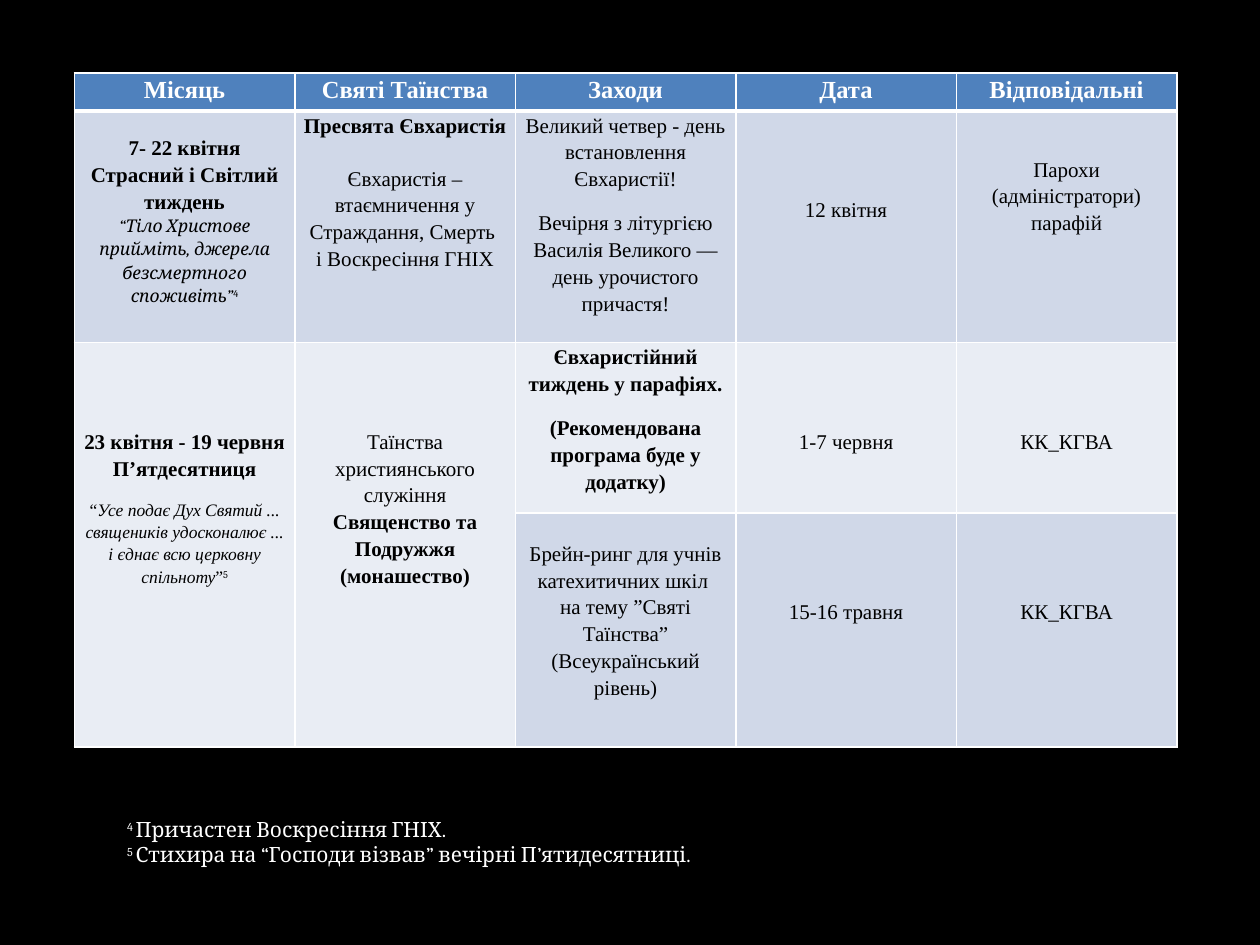
from lxml import etree
from pptx import Presentation
from pptx.dml.color import RGBColor
from pptx.enum.text import PP_ALIGN
from pptx.oxml.ns import qn
from pptx.util import Inches, Pt

CENTER = PP_ALIGN.CENTER
COLORS = {"background": "000000", "header": "4F81BD", "band": "D0D8E8",
          "light": "E9EDF4", "white": "FFFFFF", "text": "000000"}
SERIF, CAMBRIA = "Times New Roman", "Cambria"

# Run styles: font, size, bold, italic, superscript
STYLES = {
    "header": (SERIF, 14, True, False, False),
    "plain": (SERIF, 12, False, False, False),
    "bold": (SERIF, 12, True, False, False),
    "small": (SERIF, 10, False, False, False),
    "small italic": (SERIF, 10, False, True, False),
    "quote": (CAMBRIA, 10, False, True, False),
    "quote mark": (CAMBRIA, 10, False, False, True),
    "note": (CAMBRIA, 12, False, False, False),
    "note mark": (CAMBRIA, 12, False, False, True),
}

COL_WIDTH = 1.75
ROW_HEIGHTS = [0.3, 1.84, 1.35, 1.86]
HEADERS = ["Місяць", "Святі Таїнства", "Заходи", "Дата", "Відповідальні"]
MIDDLE = 0.67  # top inset of cells whose text starts halfway down


def para(text, style="plain", after=10):
    return [(text, style)], after


# (row, column): fill, top inset, paragraphs
CELLS = {
    (1, 0): ("band", 0.18, [
        para("7- 22 квітня", "bold", 0),
        para("Страсний і Світлий тиждень", "bold", 0),
        ([("“Тіло Христове прийміть, джерела безсмертного споживіть”", "quote"),
          ("4", "quote mark")], 0)]),
    (1, 1): ("band", 0, [
        para("Пресвята Євхаристія", "bold", 15),
        para("Євхаристія – втаємничення у Страждання, Смерть \nі Воскресіння ГНІХ",
             after=0)]),
    (1, 2): ("band", 0, [
        para("Великий четвер - день встановлення Євхаристії!"),
        para("Вечірня з літургією Василія Великого — день урочистого причастя!")]),
    (1, 3): ("band", MIDDLE, [para("12 квітня")]),
    (1, 4): ("band", 0.35, [para("Парохи (адміністратори) парафій")]),
    (2, 0): ("light", MIDDLE, [
        para("23 квітня - 19 червня\nП’ятдесятниця", "bold"),
        ([("“", "small"),
          ("Усе подає Дух Святий ... священиків удосконалює ... "
           "і єднає всю церковну спільноту", "small italic"),
          ("”", "small"), ("5", "quote mark")], 10)]),
    (2, 1): ("light", MIDDLE, [
        ([("Таїнства християнського служіння ", "plain"),
          ("Священство та Подружжя (монашество)", "bold")], 10)]),
    (2, 2): ("light", 0, [
        para("Євхаристійний тиждень у парафіях.", "bold"),
        para("(Рекомендована програма буде у додатку)", "bold")]),
    (2, 3): ("light", MIDDLE, [para("1-7 червня")]),
    (2, 4): ("light", MIDDLE, [para("КК_КГВА")]),
    (3, 2): ("band", 0.21, [
        para("Брейн-ринг для учнів катехитичних шкіл \nна тему ”Святі Таїнства” "
             "(Всеукраїнський рівень)")]),
    (3, 3): ("band", MIDDLE, [para("15-16 травня")]),
    (3, 4): ("band", MIDDLE, [para("КК_КГВА")]),
}

FOOTNOTES = [("4 ", "Причастен Воскресіння ГНІХ."),
             ("5 ", "Стихира на “Господи візвав” вечірні П’ятидесятниці.")]


def rgb(name):
    return RGBColor.from_string(COLORS[name])


def add_run(p, text, style, color):
    """Add styled text; each newline becomes a line break."""
    font, size, bold, italic, superscript = STYLES[style]
    for i, line in enumerate(text.split("\n")):
        if i:
            p.add_line_break()
        r = p.add_run()
        r.text = line
        r.font.name, r.font.size = font, Pt(size)
        r.font.bold, r.font.italic = bold, italic
        r.font.color.rgb = rgb(color)
        if superscript:
            r.font._element.set("baseline", "30000")


def next_paragraph(tf, i):
    return tf.add_paragraph() if i else tf.paragraphs[0]


def set_borders(cell, bottom=1):
    tcPr = cell._tc.get_or_add_tcPr()
    for side, width in (("L", 1), ("R", 1), ("T", 1), ("B", bottom)):
        ln = etree.SubElement(tcPr, qn(f"a:ln{side}"), w=str(Pt(width)))
        fill = etree.SubElement(ln, qn("a:solidFill"))
        etree.SubElement(fill, qn("a:srgbClr"), val=COLORS["white"])


def fill_cell(cell, fill, top, paragraphs, color="text"):
    cell.fill.solid()
    cell.fill.fore_color.rgb = rgb(fill)
    cell.margin_left = cell.margin_right = Inches(0.07)
    cell.margin_top, cell.margin_bottom = Inches(top), 0
    for i, (runs, after) in enumerate(paragraphs):
        p = next_paragraph(cell.text_frame, i)
        p.alignment, p.line_spacing, p.space_after = CENTER, 1.15, Pt(after)
        for text, style in runs:
            add_run(p, text, style, color)


def add_schedule(s):
    rows, cols = len(ROW_HEIGHTS), len(HEADERS)
    table = s.shapes.add_table(rows, cols, Inches(0.59), Inches(0.58),
                               Inches(COL_WIDTH * cols),
                               Inches(sum(ROW_HEIGHTS))).table
    for col in table.columns:
        col.width = Inches(COL_WIDTH)
    for r, height in enumerate(ROW_HEIGHTS):
        table.rows[r].height = Inches(height)
        for c in range(cols):
            set_borders(table.cell(r, c), 1 if r else 3)
    for c in (0, 1):
        table.cell(2, c).merge(table.cell(3, c))
    for c, text in enumerate(HEADERS):
        fill_cell(table.cell(0, c), "header", 0, [para(text, "header")], "white")
    for (r, c), content in CELLS.items():
        fill_cell(table.cell(r, c), *content)


def add_footnotes(s):
    tf = s.shapes.add_textbox(Inches(0.91), Inches(6.43),
                              Inches(8.11), Inches(0.5)).text_frame
    tf.word_wrap = True
    for i, (mark, text) in enumerate(FOOTNOTES):
        p = next_paragraph(tf, i)
        add_run(p, mark, "note mark", "white")
        add_run(p, text, "note", "white")


def main():
    prs = Presentation()
    prs.slide_width, prs.slide_height = Inches(10), Inches(7.5)
    s = prs.slides.add_slide(prs.slide_layouts[6])
    s.background.fill.solid()
    s.background.fill.fore_color.rgb = rgb("background")
    add_schedule(s)
    add_footnotes(s)
    prs.save("out.pptx")


if __name__ == "__main__":
    main()
